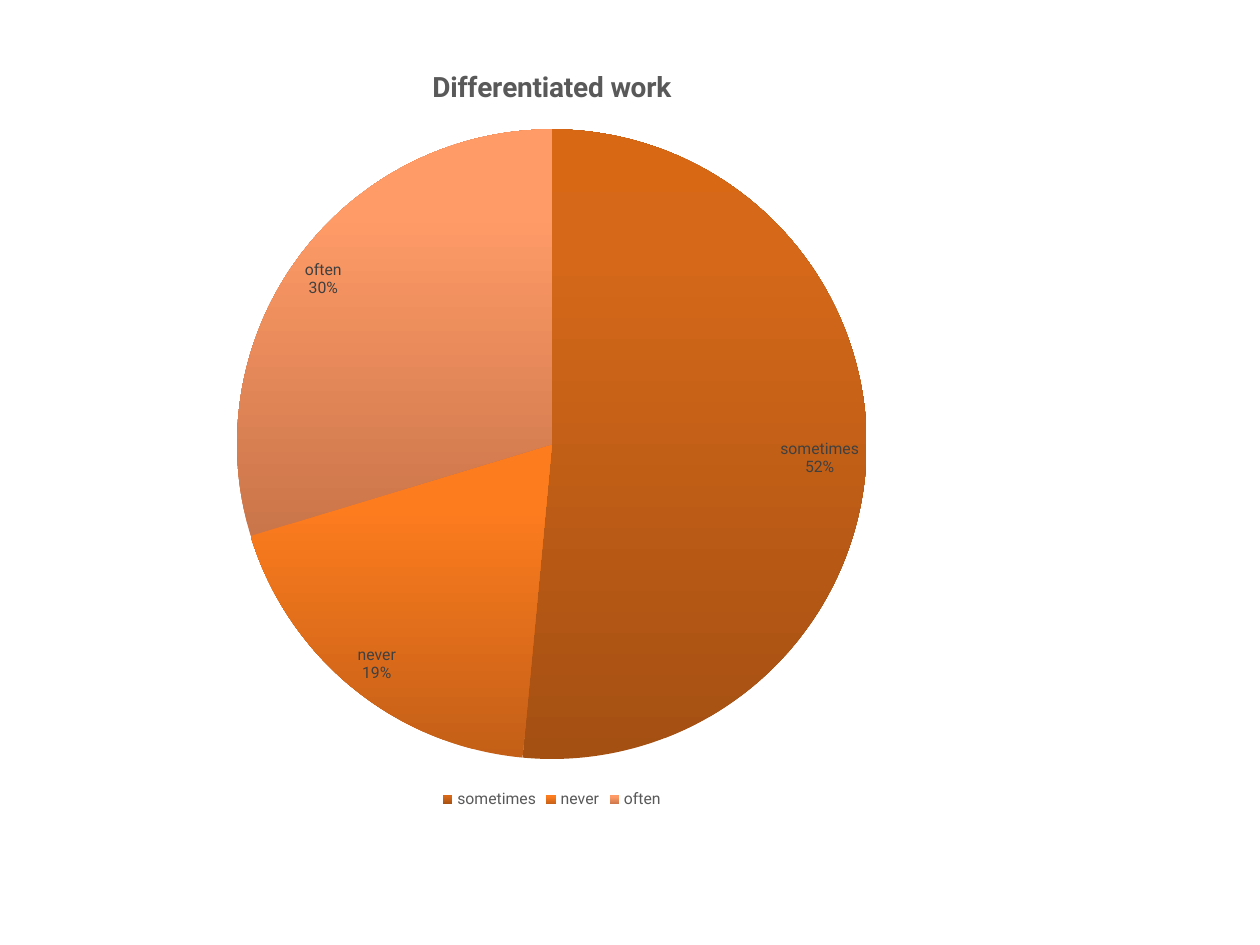
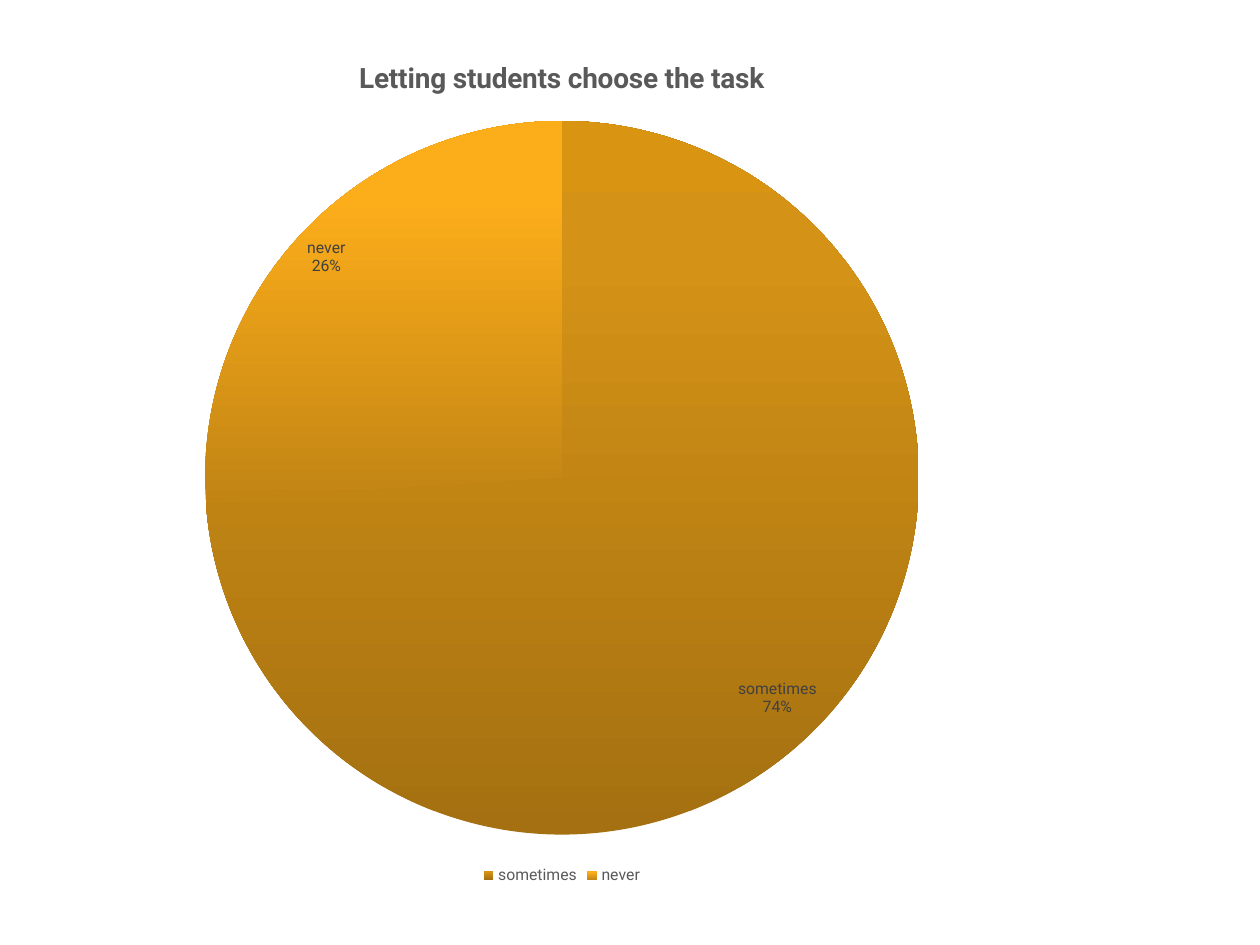
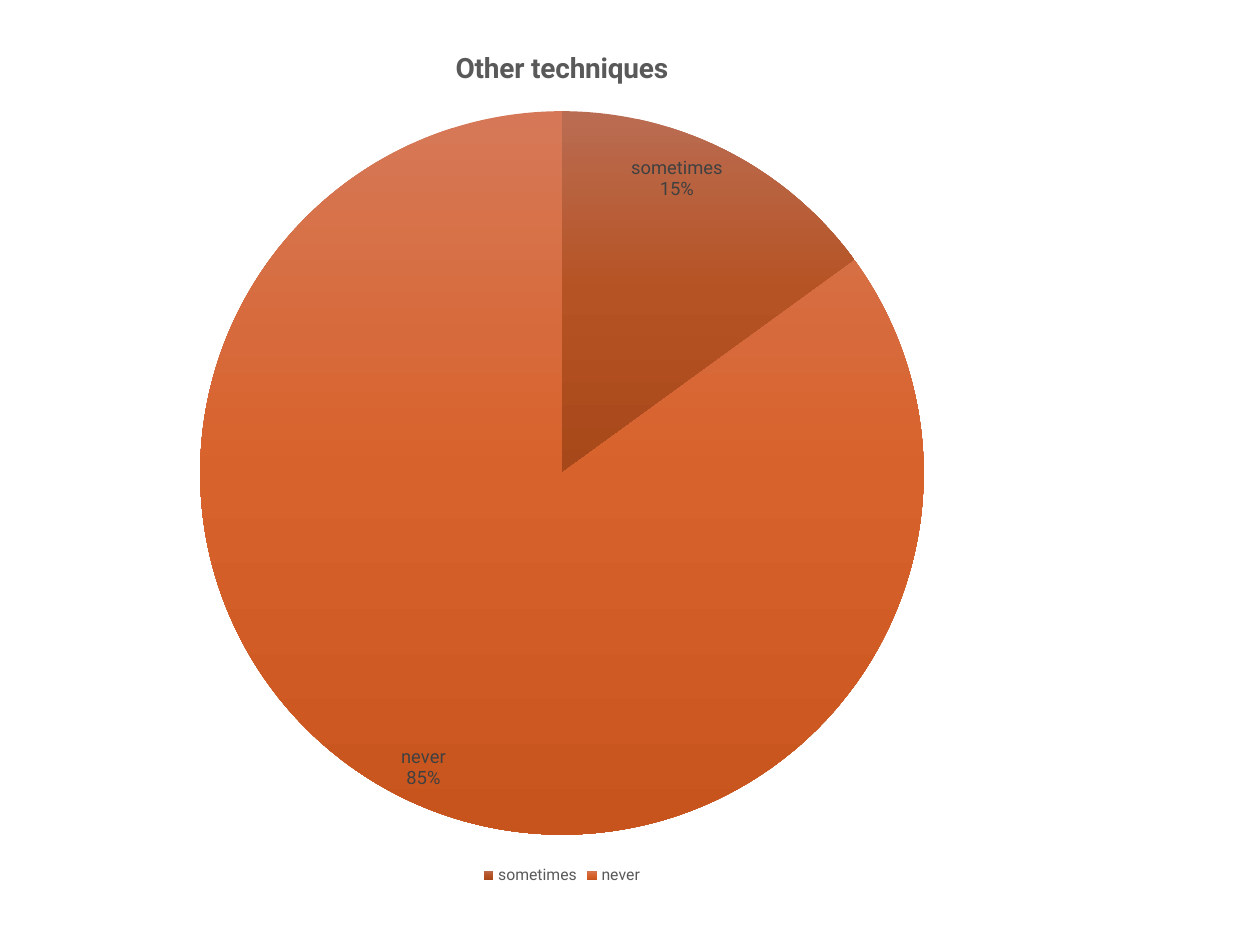
"""Build three slides, each with a pie chart of survey answers."""
from copy import deepcopy
from dataclasses import dataclass

from lxml.etree import QName, SubElement
from pptx import Presentation
from pptx.chart.chart import Chart
from pptx.chart.data import CategoryChartData
from pptx.chart.point import Point
from pptx.dml.color import RGBColor
from pptx.enum.chart import XL_CHART_TYPE, XL_LABEL_POSITION, XL_LEGEND_POSITION
from pptx.presentation import Presentation as Deck
from pptx.text.text import Font
from pptx.util import Inches, Pt


@dataclass(frozen=True)
class Theme:
    """Hold the font, type sizes and text colours of every chart."""
    font: str = "Roboto"
    title_size: float = 16
    legend_size: float = 9
    title_color: str = "595959"
    label_color: str = "404040"


@dataclass(frozen=True)
class Slice:
    """Describe one answer, its share and its gradient colours."""
    answer: str
    share: int
    colors: tuple[str, str, str]


@dataclass(frozen=True)
class Pie:
    """Describe one pie chart and its place on the slide."""
    title: str
    series: str
    left: float
    top: float
    height: float
    slices: tuple[Slice, ...]
    middle_stop: float = 0.8
    angle: int = 90
    label_size: float = 9
    width: float = 7.92


THEME = Theme()
PIES = (
    Pie("Differentiated work", "Series 1", 0.42, 0.33, 6.13, (
        Slice("sometimes", 52, ("A45013", "D56819", "D96815")),
        Slice("never", 19, ("C35F17", "FD7C1E", "FF7C1D")),
        Slice("often", 30, ("CA754A", "FF9B67", "FF9C69")),
    )),
    Pie("Letting students choose the task", "Letting students choose the task", 0.5, 0.25, 6.81, (
        Slice("sometimes", 74, ("A47011", "D49216", "D99412")),
        Slice("never", 26, ("C28514", "FCAD1A", "FFAE18")),
    )),
    Pie("Other techniques", "Series 1", 0.5, 0.17, 6.89, (
        Slice("sometimes", 15, ("BA6C52", "B65324", "A7481A")),
        Slice("never", 85, ("D67857", "D8622B", "C8541D")),
    ), middle_stop=0.5, angle=270, label_size=10.5),
)


def style_font(font: Font, size: float, color: str, bold: bool = False) -> None:
    """Apply the theme font with a size, colour and weight."""
    font.name = THEME.font
    font.size = Pt(size)
    font.bold = bold
    font.color.rgb = RGBColor.from_string(color)


def paint_slice(chart: Chart, point: Point, colors: tuple[str, ...], pie: Pie) -> None:
    """Fill one slice with a three-stop gradient and no outline."""
    fill = point.format.fill
    fill.gradient()
    fill.gradient_angle = pie.angle
    stop_list = chart.element.xpath("//c:dPt/c:spPr/a:gradFill/a:gsLst")[-1]
    stop_list.insert(1, deepcopy(stop_list[0]))
    for stop, color, position in zip(fill.gradient_stops, colors, (0, pie.middle_stop, 1)):
        stop.color.rgb = RGBColor.from_string(color)
        stop.position = position
    point.format.line.fill.background()


def add_labels(chart: Chart, size: float) -> None:
    """Show the answer above its percentage inside each slice."""
    plot = chart.plots[0]
    plot.has_data_labels = True
    labels = plot.data_labels
    style_font(labels.font, size, THEME.label_color)
    labels.number_format = '0"%"'
    labels.number_format_is_linked = False
    labels.position = XL_LABEL_POSITION.INSIDE_END
    labels.show_category_name = True
    labels.show_value = True
    labels.show_percentage = False
    last_flag = chart.element.xpath("//c:dLbls/c:showBubbleSize")[0]
    separator = SubElement(last_flag.getparent(), QName(last_flag.nsmap["c"], "separator"))
    separator.text = "\n"
    last_flag.addnext(separator)


def add_pie_slide(deck: Deck, pie: Pie) -> None:
    """Add a slide with one titled pie chart and its legend."""
    data = CategoryChartData()
    data.categories = [part.answer for part in pie.slices]
    data.add_series(pie.series, [part.share for part in pie.slices])
    page = deck.slides.add_slide(deck.slide_layouts[6])
    chart = page.shapes.add_chart(
        XL_CHART_TYPE.PIE, Inches(pie.left), Inches(pie.top),
        Inches(pie.width), Inches(pie.height), data,
    ).chart
    style_font(chart.font, THEME.legend_size, THEME.title_color)

    chart.has_title = True
    heading = chart.chart_title.text_frame
    heading.text = pie.title
    style_font(heading.paragraphs[0].runs[0].font, THEME.title_size, THEME.title_color, bold=True)

    chart.has_legend = True
    chart.legend.position = XL_LEGEND_POSITION.BOTTOM
    chart.legend.include_in_layout = False
    style_font(chart.legend.font, THEME.legend_size, THEME.title_color)

    plot = chart.plots[0]
    plot.vary_by_categories = True
    for index, part in enumerate(pie.slices):
        paint_slice(chart, plot.series[0].points[index], part.colors, pie)
    add_labels(chart, pie.label_size)


def main() -> None:
    """Create the deck and save it."""
    deck = Presentation()
    deck.slide_width, deck.slide_height = Inches(10), Inches(7.5)
    for pie in PIES:
        add_pie_slide(deck, pie)
    deck.save("out.pptx")


if __name__ == "__main__":
    main()
